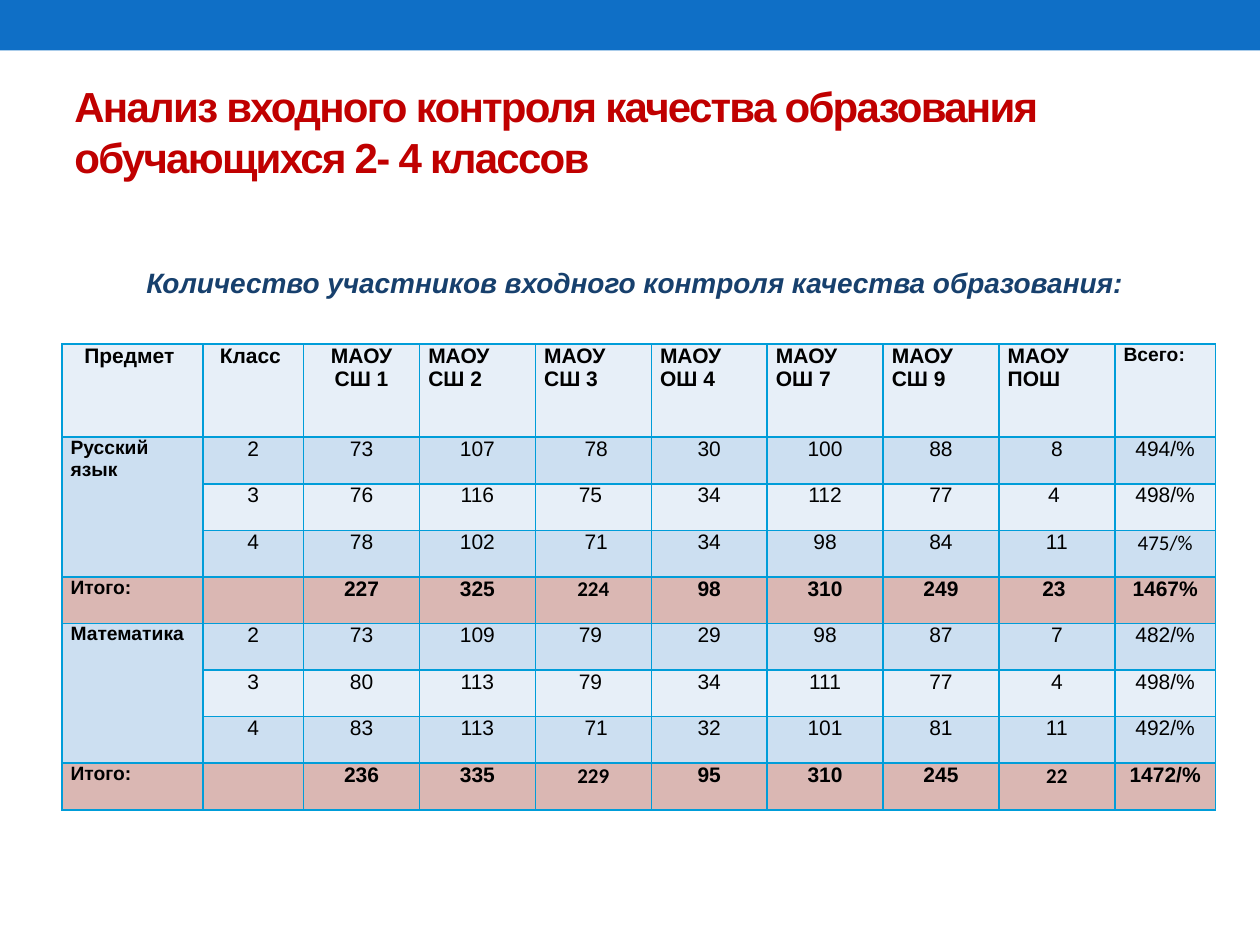
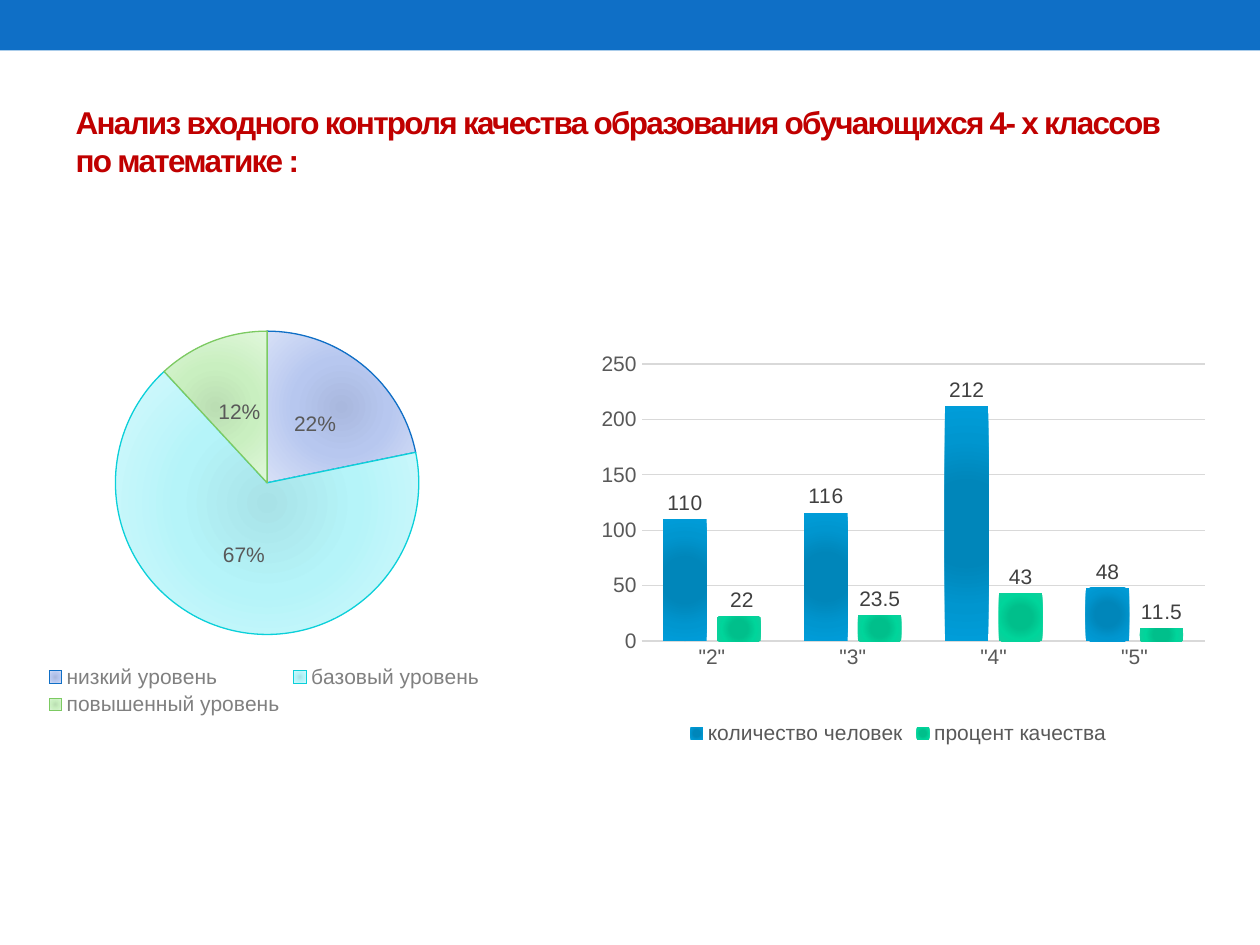
from pptx import Presentation
from pptx.chart.data import CategoryChartData
from pptx.dml.color import RGBColor
from pptx.enum.chart import XL_CHART_TYPE, XL_LABEL_POSITION, XL_LEGEND_POSITION, XL_TICK_MARK
from pptx.enum.shapes import MSO_SHAPE
from pptx.enum.text import MSO_ANCHOR, PP_ALIGN
from pptx.oxml import parse_xml
from pptx.oxml.ns import nsdecls, qn
from pptx.util import Inches, Pt

RED, BLUE, NAVY, GRAY, GRID = "C00000", "0F6FC6", "17406D", "595959", "D9D9D9"
LIGHT, MID, PINK, BORDER = "E7EFF8", "CCDFF1", "DAB7B3", "009DD9"


def set_font(font, size, color, bold=False, name="Arial"):
    font.name, font.size, font.bold = name, Pt(size), bold
    font.color.rgb = RGBColor.from_string(color)


def set_gradient(fill, stops):
    fill.solid()
    gs = "".join(f'<a:gs pos="{pos * 1000}"><a:srgbClr val="{c}"/></a:gs>' for pos, c in stops)
    grad = parse_xml(
        f'<a:gradFill {nsdecls("a")} rotWithShape="1"><a:gsLst>{gs}</a:gsLst><a:path path="circle">'
        '<a:fillToRect l="50000" t="50000" r="50000" b="50000"/></a:path></a:gradFill>')
    solid = fill._xPr.find(qn("a:solidFill"))
    solid.getparent().replace(solid, grad)


prs = Presentation()
prs.slide_width, prs.slide_height = Inches(10), Inches(7.5)

titles = [
    ("Анализ входного контроля качества образования обучающихся 2- 4 классов", 24, 0.49, 0.5),
    ("Анализ входного контроля качества образования обучающихся 4- х классов по математике :", 18, 0.5, 0.58),
]
for text, size, left, top in titles:
    s = prs.slides.add_slide(prs.slide_layouts[5])
    title = s.shapes.title
    title.left, title.top, title.width, title.height = Inches(left), Inches(top), Inches(9), Inches(1.08)
    tf = title.text_frame
    tf.text = text
    tf.vertical_anchor = MSO_ANCHOR.MIDDLE
    p = tf.paragraphs[0]
    p.alignment = PP_ALIGN.LEFT
    set_font(p.font, size, RED, True)
    p.runs[0]._r.get_or_add_rPr().set("spc", "-100")
table_slide, chart_slide = prs.slides

band = table_slide.shapes.add_shape(MSO_SHAPE.RECTANGLE, 0, 0, Inches(10), Inches(0.4))
band.shadow.inherit = False
band.fill.solid()
band.fill.fore_color.rgb = RGBColor.from_string(BLUE)
band.line.fill.background()
band._element.nvSpPr.cNvPr.set("id", "99")
prs.slide_master.shapes._spTree.insert(2, band._element)

rows = [
    ["Предмет ", "Класс ", "МАОУ СШ 1", "МАОУ СШ 2", "МАОУ СШ 3", "МАОУ ОШ 4", "МАОУ ОШ 7",
     "МАОУ СШ 9", "МАОУ ПОШ", "Всего:"],
    ["Русский язык", "2", "73", "107", " 78", "30", "100", "88", "8", "494/%"],
    ["", "3", "76", "116", "75 ", "34", "112", "77", "4 ", "498/%"],
    ["", "4", "78", "102", " 71", "34", "98", "84", "11", "475/%"],
    ["Итого:", "", "227", "325", "224", "98", "310", "249", "23 ", "1467%"],
    ["Математика", "2", "73", "109", "79 ", "29", "98", "87", "7", "482/%"],
    ["", "3", "80", "113", "79 ", "34", "111", "77", "4", "498/%"],
    ["", "4", "83", "113", " 71", "32", "101", "81", "11", "492/%"],
    ["Итого:", "", "236", "335", "229", "95", "310", "245", "22", "1472/%"],
]
calibri_cells = {(3, 9), (4, 4), (8, 4), (8, 8)}
table = table_slide.shapes.add_table(
    len(rows), len(rows[0]), Inches(0.49), Inches(2.73), Inches(9.16), Inches(3.7)).table
for col, width in zip(table.columns, [1.12, 0.8] + [0.92] * 7 + [0.8]):
    col.width = Inches(width)
for row, height in zip(table.rows, [0.74] + [0.37] * 8):
    row.height = Inches(height)
for i, row in enumerate(rows):
    total = row[0] == "Итого:"
    row_fill = PINK if total else LIGHT if i == 0 or row[1] == "3" else MID
    for j, text in enumerate(row):
        cell = table.cell(i, j)
        cell.text = text
        cell.margin_left = cell.margin_right = Inches(0.07)
        cell.margin_top = cell.margin_bottom = 0
        cell.fill.solid()
        cell.fill.fore_color.rgb = RGBColor.from_string(row_fill)
        p = cell.text_frame.paragraphs[0]
        left_aligned = j > 2 if i == 0 else j == 0
        p.alignment = PP_ALIGN.LEFT if left_aligned else PP_ALIGN.CENTER
        small = text == "Всего:" or (i > 0 and j == 0)
        set_font(p.font, 11 if small else 12, "000000", i == 0 or j == 0 or total,
                 "Calibri" if (i, j) in calibri_cells else "Arial")
        for k, side in enumerate(["lnL", "lnR", "lnT", "lnB"]):
            cell._tc.get_or_add_tcPr().insert(k, parse_xml(
                f'<a:{side} {nsdecls("a")} w="12700"><a:solidFill><a:srgbClr val="{BORDER}"/>'
                f'</a:solidFill></a:{side}>'))
for first in (1, 5):
    table.cell(first, 0).merge(table.cell(first + 2, 0))

tb = table_slide.shapes.add_textbox(Inches(0.59), Inches(2.06), Inches(8.9), Inches(0.67))
tf = tb.text_frame
tf.word_wrap = True
tf.text = "Количество участников входного контроля качества образования:"
p = tf.paragraphs[0]
p.alignment = PP_ALIGN.CENTER
set_font(p.font, 16, NAVY, True)
p.font.italic = True

column_data = CategoryChartData()
column_data.categories = ['"2"', '"3"', '"4"', '"5"']
column_data.add_series("количество человек", [110, 116, 212, 48])
column_data.add_series("процент качества", [22, 23.5, 43, 11.5])
pie_data = CategoryChartData()
pie_data.categories = ["низкий уровень ", "базовый уровень ", "повышенный уровень"]
pie_data.add_series("Уровень", [22, 67, 12])

charts = []
for kind, data, left, top, width, height, legend_color in [
    (XL_CHART_TYPE.COLUMN_CLUSTERED, column_data, 4.53, 2.69, 5.2, 3.26, GRAY),
    (XL_CHART_TYPE.PIE, pie_data, -0.28, 2.49, 4.8, 3.23, "808080"),
]:
    chart = chart_slide.shapes.add_chart(
        kind, Inches(left), Inches(top), Inches(width), Inches(height), data).chart
    set_font(chart.font, 10, "000000")
    chart.has_title = False
    chart.has_legend = True
    chart.legend.position = XL_LEGEND_POSITION.BOTTOM
    chart.legend.include_in_layout = False
    set_font(chart.legend.font, 12, legend_color)
    charts.append(chart)
columns, pie = charts

plot = columns.plots[0]
plot.gap_width, plot.overlap = 100, -24
plot.vary_by_categories = False
for axis in (columns.category_axis, columns.value_axis):
    axis.major_tick_mark = axis.minor_tick_mark = XL_TICK_MARK.NONE
    set_font(axis.tick_labels.font, 12, GRAY)
axis_line = columns.category_axis.format.line
grid_line = columns.value_axis.major_gridlines.format.line
for line, width in [(axis_line, 1), (grid_line, 0.75)]:
    line.color.rgb = RGBColor.from_string(GRID)
    line.width = Pt(width)
columns.value_axis.format.line.fill.background()
columns.value_axis.minimum_scale, columns.value_axis.maximum_scale = 0, 250
columns.value_axis.major_unit = 50

column_colors = [("0086BA", "0096CF", "009DD9"), ("00BF8B", "00D59B", "10CF9B")]
for series, (inner, middle, outer) in zip(plot.series, column_colors):
    set_gradient(series.format.fill, [(0, inner), (34, inner), (70, middle), (100, outer)])
    labels = series.data_labels
    labels.show_value = True
    labels.position = XL_LABEL_POSITION.OUTSIDE_END
    set_font(labels.font, 12, "404040")

label = plot.series[1].points[0].data_label
label.text_frame.text = " 22"
label.position = XL_LABEL_POSITION.OUTSIDE_END
set_font(label.text_frame.paragraphs[0].runs[0].font, 12, "404040")

plot_area = columns._chartSpace.chart.plotArea
for old in plot_area.findall(qn("c:layout")):
    plot_area.remove(old)
place = "".join(f'<c:{tag} val="{val}"/>' for tag, val in [
    ("layoutTarget", "inner"), ("xMode", "edge"), ("yMode", "edge"),
    ("x", 0.108), ("y", 0.061), ("w", 0.86), ("h", 0.675)])
plot_area.insert(0, parse_xml(
    f'<c:layout {nsdecls("c")}><c:manualLayout>{place}</c:manualLayout></c:layout>'))

pie_colors = [
    ("A9B8DE", "B7C7EF", "D7E0F7", BLUE),
    ("A8E2E7", "B5F4F9", "D6F9FC", "0BD0D9"),
    ("BBDEB3", "C9EFC0", "E1F7DC", "7CCA62"),
]
plot = pie.plots[0]
plot.vary_by_categories = True
for i, (inner, middle, outer, edge) in enumerate(pie_colors):
    fmt = plot.series[0].points[i].format
    set_gradient(fmt.fill, [(0, inner), (45, middle), (100, outer)])
    fmt.line.color.rgb = RGBColor.from_string(edge)
    fmt.line.width = Pt(0.75)
labels = plot.series[0].data_labels
labels.show_value = True
labels.show_percentage = False
labels.number_format, labels.number_format_is_linked = '0"%"', False
labels.position = XL_LABEL_POSITION.CENTER
set_font(labels.font, 12, GRAY)

prs.save("out.pptx")
